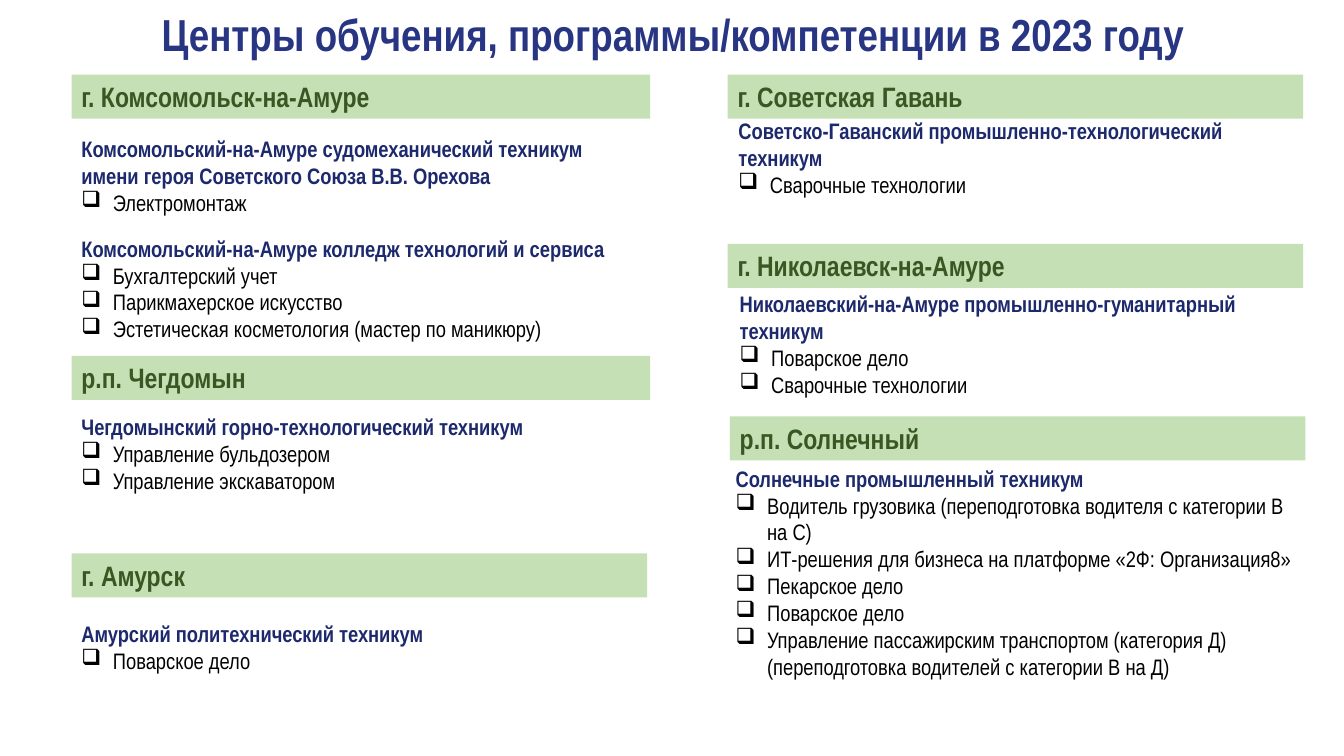
from dataclasses import dataclass

from lxml.etree import SubElement
from pptx import Presentation
from pptx.dml.color import RGBColor
from pptx.enum.shapes import MSO_SHAPE
from pptx.enum.text import MSO_ANCHOR, PP_ALIGN
from pptx.oxml.ns import qn
from pptx.util import Pt


@dataclass(frozen=True)
class Theme:
    font: str = "Arial Narrow"
    title_color: str = "283583"
    band_fill: str = "C5E0B4"
    band_color: str = "385723"
    college_color: str = "1D296D"
    program_color: str = "000000"
    title_size: int = 32
    band_size: int = 20
    body_size: int = 16


theme = Theme()


def write(paragraph, text, *, size, color, bold=True, align=PP_ALIGN.LEFT, bullet=None):
    """Fill a paragraph with one formatted run and an optional hanging bullet."""
    paragraph.alignment = align
    run = paragraph.add_run()
    run.text = text
    run.font.name = theme.font
    run.font.size = Pt(size)
    run.font.bold = bold
    run.font.color.rgb = RGBColor.from_string(color)
    if bullet:
        properties = paragraph._p.get_or_add_pPr()
        properties.set("marL", str(Pt(22.5)))
        properties.set("indent", str(-Pt(22.5)))
        SubElement(properties, qn("a:buChar")).set("char", bullet)


presentation = Presentation()
presentation.slide_width, presentation.slide_height = Pt(960), Pt(540)
slide = presentation.slides.add_slide(presentation.slide_layouts[5])

# Title
title = slide.shapes.title
title.left, title.top, title.width, title.height = Pt(28), Pt(8.6), Pt(906), Pt(36)
title.text_frame.vertical_anchor = MSO_ANCHOR.MIDDLE
title.text_frame.word_wrap = True
heading = title.text_frame.paragraphs[0]
heading.line_spacing = 0.9
write(heading, "Центры обучения, программы/компетенции в 2023 году",
      size=theme.title_size, color=theme.title_color, align=PP_ALIGN.CENTER)

# Town bands: left, top, width, name
bands = [
    (51.1, 53.3, 413.3, "г. Комсомольск-на-Амуре"),
    (51.1, 254.2, 413.3, "р.п. Чегдомын"),
    (51.1, 395.3, 411.1, "г. Амурск"),
    (519.8, 53.3, 411.1, "г. Советская Гавань"),
    (519.8, 174.2, 411.1, "г. Николаевск-на-Амуре"),
    (521.3, 297.4, 411.1, "р.п. Солнечный"),
]
for left, top, width, town in bands:
    band = slide.shapes.add_shape(MSO_SHAPE.RECTANGLE, Pt(left), Pt(top), Pt(width), Pt(31.5))
    band.shadow.inherit = False
    band.fill.solid()
    band.fill.fore_color.rgb = RGBColor.from_string(theme.band_fill)
    band.line.fill.background()
    band.text_frame.word_wrap = True
    band.text_frame.vertical_anchor = MSO_ANCHOR.TOP
    write(band.text_frame.paragraphs[0], town, size=theme.band_size, color=theme.band_color)

# Colleges: left, top, number of text lines, name, programs
colleges = [
    (51.1, 92.9, 3, "Комсомольский-на-Амуре судомеханический техникум имени героя Советского Союза В.В. Орехова",
     ["Электромонтаж"]),
    (51.1, 164.2, 4, "Комсомольский-на-Амуре колледж технологий и сервиса",
     ["Бухгалтерский учет", "Парикмахерское искусство",
      "Эстетическая косметология (мастер по маникюру)"]),
    (51.1, 291.6, 3, "Чегдомынский горно-технологический техникум",
     ["Управление бульдозером", "Управление экскаватором"]),
    (51.1, 439.2, 2, "Амурский политехнический техникум",
     ["Поварское дело"]),
    (520.4, 80.4, 3, "Советско-Гаванский промышленно-технологический техникум",
     ["Сварочные технологии"]),
    (521.3, 204, 4, "Николаевский-на-Амуре промышленно-гуманитарный техникум",
     ["Поварское дело", "Сварочные технологии"]),
    (518.4, 328.5, 8, "Солнечные промышленный техникум",
     ["Водитель грузовика (переподготовка водителя с категории В на С)",
      "ИТ-решения для бизнеса на платформе «2Ф: Организация8»",
      "Пекарское дело", "Поварское дело",
      "Управление пассажирским транспортом (категория Д) (переподготовка водителей с категории В на Д)"]),
]
for left, top, lines, college, programs in colleges:
    height = lines * 19.4 + 7.2
    box = slide.shapes.add_textbox(Pt(left), Pt(top), Pt(413.3), Pt(height))
    frame = box.text_frame
    frame.word_wrap = True
    write(frame.paragraphs[0], college, size=theme.body_size, color=theme.college_color)
    for program in programs:
        write(frame.add_paragraph(), program, size=theme.body_size,
              color=theme.program_color, bold=False, bullet="❑")

presentation.save("out.pptx")
